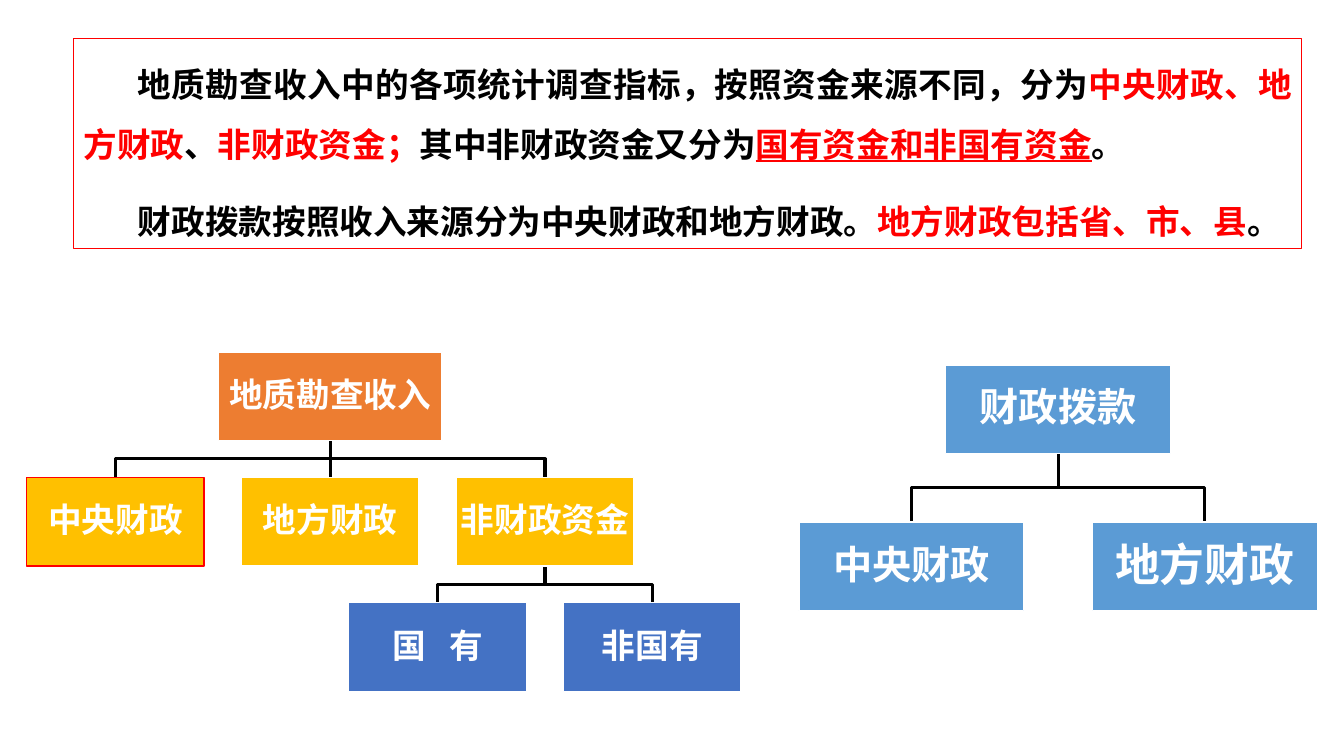
from dataclasses import dataclass

from lxml.etree import SubElement
from pptx import Presentation
from pptx.dml.color import RGBColor
from pptx.enum.shapes import MSO_CONNECTOR, MSO_SHAPE
from pptx.enum.text import MSO_ANCHOR, MSO_AUTO_SIZE, PP_ALIGN
from pptx.oxml.ns import qn
from pptx.util import Inches, Pt


@dataclass(frozen=True)
class Theme:
    black: str = "000000"
    white: str = "FFFFFF"
    red: str = "FF0000"
    orange: str = "ED7D31"
    gold: str = "FFC000"
    navy: str = "4472C4"
    blue: str = "5B9BD5"
    small: int = 24
    large: int = 28
    huge: int = 32
    body: str = "Arial"
    label: str = "Noto Sans CJK SC"
    thin: float = 0.75
    edge: float = 1
    link: float = 2.25


LOOK = Theme()


@dataclass(frozen=True)
class Bit:
    text: str
    hue: str = LOOK.black
    under: bool = False
    gap: int = 0


@dataclass(frozen=True)
class Node:
    text: str
    col: float
    row: int
    fill: str
    boss: int | None = None
    wide: float = 1.76
    size: int = LOOK.small
    edge: str = LOOK.white
    gap: int = 0


@dataclass(frozen=True)
class Tree:
    left: float
    top: float
    col: float
    row: float
    nodes: tuple[Node, ...]
    high: float = 0.88

    def center(self, node: Node) -> float:
        return self.left + node.col * self.col

    def head(self, node: Node) -> float:
        return self.top + node.row * self.row


INTRO = (
    (
        Bit("地质勘查收入中的各项统计调查指标，按照资金来源不同，分为"),
        Bit("中央财政、地方财政", LOOK.red),
        Bit("、"),
        Bit("非财政资金；", LOOK.red),
        Bit("其中非财政资金又分为"),
        Bit("国有资金和非国有资金", LOOK.red, True),
        Bit("。"),
    ),
    (
        Bit("财政拨款按照收入来源分为中央财政和地方财政。"),
        Bit("地方财政包括省、市、县", LOOK.red),
        Bit("。"),
    ),
)

TREES = (
    Tree(1.145, 3.49, 2.13, 1.245, (
        Node("地质勘查收入", 1, 0, LOOK.orange, wide=2.22),
        Node("中央财政", 0, 1, LOOK.gold, 0, edge=LOOK.red),
        Node("地方财政", 1, 1, LOOK.gold, 0),
        Node("非财政资金", 2, 1, LOOK.gold, 0),
        Node("国 有", 1.5, 2, LOOK.navy, 3, gap=11),
        Node("非国有", 2.5, 2, LOOK.navy, 3),
    )),
    Tree(9.04, 3.62, 1.455, 1.56, (
        Node("财政拨款", 1, 0, LOOK.blue, wide=2.23, size=LOOK.large),
        Node("中央财政", 0, 1, LOOK.blue, 0, 2.23, LOOK.large),
        Node("地方财政", 2, 1, LOOK.blue, 0, 2.23, LOOK.huge),
    )),
)


def add_bit(para, bit: Bit, size: int, face: str) -> None:
    run = para.add_run()
    run.text = bit.text
    font = run.font
    font.size, font.name, font.bold = Pt(size), face, True
    font.underline = bit.under
    font.color.rgb = RGBColor.from_string(bit.hue)
    props = run._r.get_or_add_rPr()
    props.set("lang", "zh-CN")
    if bit.gap:
        props.set("spc", str(bit.gap * 100))
    SubElement(props, qn("a:ea")).set("typeface", face)


def add_box(slide, left: float, top: float, wide: float, high: float,
            fill: str | None, edge: str, weight: float):
    box = slide.shapes.add_shape(
        MSO_SHAPE.RECTANGLE, Inches(left), Inches(top), Inches(wide), Inches(high))
    box.shadow.inherit = False
    if fill:
        box.fill.solid()
        box.fill.fore_color.rgb = RGBColor.from_string(fill)
    else:
        box.fill.background()
    box.line.color.rgb = RGBColor.from_string(edge)
    box.line.width = Pt(weight)
    box.text_frame.word_wrap = True
    return box


def add_intro(slide) -> None:
    frame = add_box(slide, 0.73, 0.38, 12.18, 2.09, None, LOOK.red, LOOK.thin).text_frame
    frame.vertical_anchor = MSO_ANCHOR.TOP
    frame.auto_size = MSO_AUTO_SIZE.SHAPE_TO_FIT_TEXT
    for index, bits in enumerate(INTRO):
        para = frame.add_paragraph() if index else frame.paragraphs[0]
        para.alignment = PP_ALIGN.JUSTIFY
        para.line_spacing = 1.5
        para.space_before = Pt(0 if index == 0 else 12)
        para._p.get_or_add_pPr().set("indent", str(Inches(0.54)))
        for bit in bits:
            add_bit(para, bit, LOOK.small, LOOK.body)


def add_node(slide, tree: Tree, node: Node):
    box = add_box(slide, tree.center(node) - node.wide / 2, tree.head(node),
                  node.wide, tree.high, node.fill, node.edge, LOOK.edge)
    frame = box.text_frame
    frame.vertical_anchor = MSO_ANCHOR.MIDDLE
    frame.margin_left = frame.margin_right = Inches(0.02)
    frame.margin_top = frame.margin_bottom = Inches(0.02)
    para = frame.paragraphs[0]
    para.alignment = PP_ALIGN.CENTER
    para.line_spacing = 0.9
    first, space, last = node.text.partition(" ")
    for text, gap in ((first, 0), (space, node.gap), (last, 0)):
        if text:
            add_bit(para, Bit(text, LOOK.white, gap=gap), node.size, LOOK.label)
    return box


def add_link(slide, tree: Tree, boss: Node, node: Node, above, below) -> None:
    start, end = Inches(tree.center(boss)), Inches(tree.center(node))
    top, foot = Inches(tree.head(boss) + tree.high), Inches(tree.head(node))
    if boss.col == node.col:
        link = slide.shapes.add_connector(MSO_CONNECTOR.STRAIGHT, start, top, end, foot)
        link.begin_connect(above, 2)
        link.end_connect(below, 0)
        SubElement(link._element.spPr, qn("a:effectLst"))
    else:
        mid = (top + foot) // 2
        shape = slide.shapes.build_freeform(start, top)
        shape.add_line_segments(((start, mid), (end, mid), (end, foot)), close=False)
        link = shape.convert_to_shape()
        link.fill.background()
        link.shadow.inherit = False
    link.line.color.rgb = RGBColor.from_string(LOOK.black)
    link.line.width = Pt(LOOK.link)
    slide.shapes._spTree.insert(2, link._element)


def add_tree(slide, tree: Tree) -> None:
    boxes = [add_node(slide, tree, node) for node in tree.nodes]
    for node, box in zip(tree.nodes, boxes):
        if node.boss is not None:
            add_link(slide, tree, tree.nodes[node.boss], node, boxes[node.boss], box)


def main() -> None:
    deck = Presentation()
    deck.slide_width, deck.slide_height = Inches(13.33), Inches(7.5)
    slide = deck.slides.add_slide(deck.slide_layouts[6])
    for tree in TREES:
        add_tree(slide, tree)
    add_intro(slide)
    deck.save("out.pptx")


if __name__ == "__main__":
    main()
